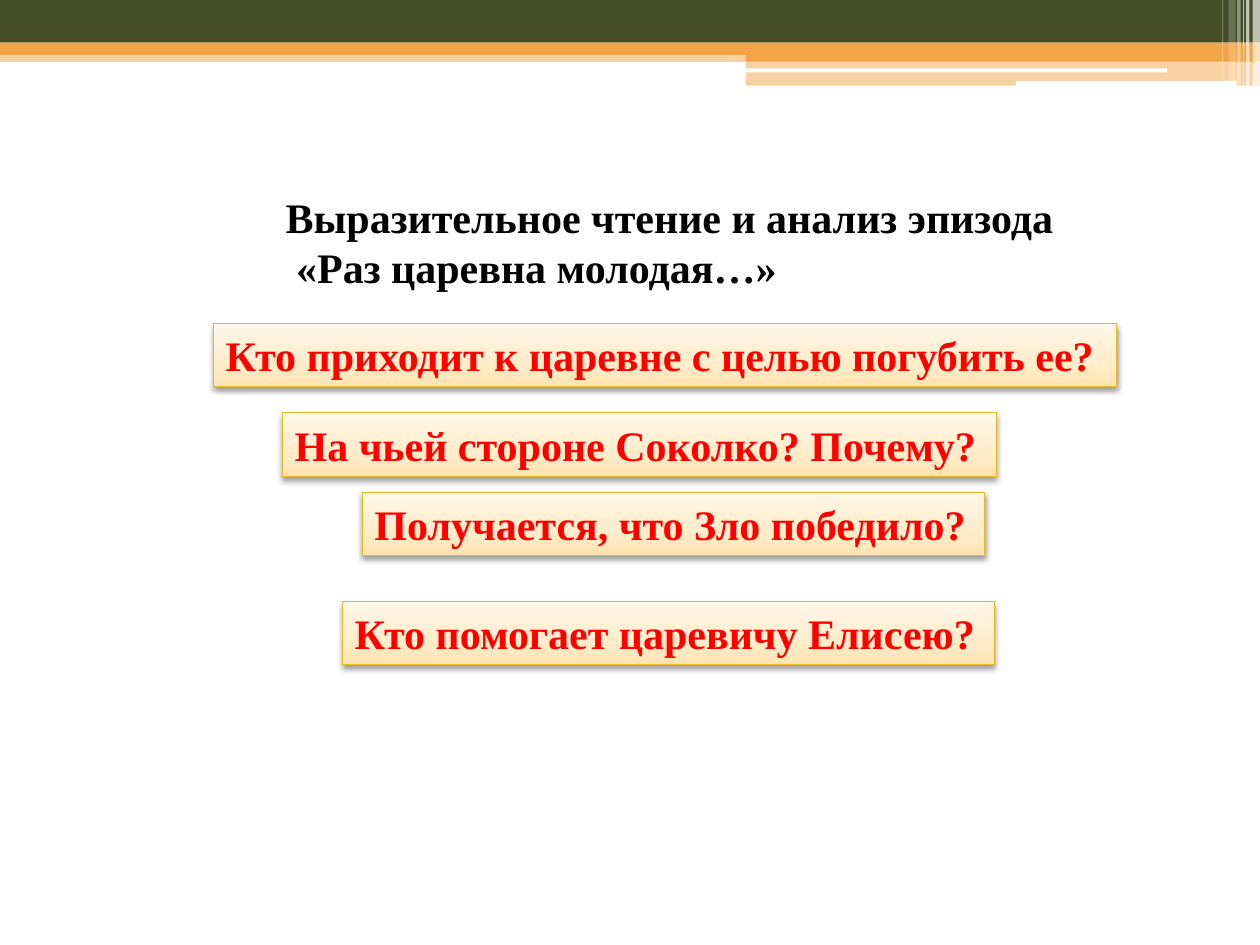
import copy
import lxml.etree
import pptx
import pptx.dml.color
import pptx.enum.shapes
import pptx.enum.text
import pptx.oxml.ns
import pptx.util

Cm = pptx.util.Cm
Pt = pptx.util.Pt
RGBColor = pptx.dml.color.RGBColor
SHAPES = pptx.enum.shapes.MSO_SHAPE
ANCHOR = pptx.enum.text.MSO_ANCHOR
qn = pptx.oxml.ns.qn

WHITE = RGBColor(0xFF, 0xFF, 0xFF)
BLACK = RGBColor(0x00, 0x00, 0x00)
RED = RGBColor(0xFF, 0x00, 0x00)
OLIVE = RGBColor(0x44, 0x4D, 0x26)
ORANGE = RGBColor(0xF3, 0xA4, 0x47)
GOLD = RGBColor(0xE7, 0xBA, 0x23)
CREAM_STOPS = [
    (0, RGBColor(0xFF, 0xE4, 0xB2)),
    (0.35, RGBColor(0xFF, 0xEC, 0xC9)),
    (1, RGBColor(0xFF, 0xF7, 0xEA)),
]

deck = pptx.Presentation()
deck.slide_width, deck.slide_height = Cm(25.4), Cm(19.05)
page = deck.slides.add_slide(deck.slide_layouts[6])


def add_bar(left, top, width, height, color, opacity=100, kind=SHAPES.RECTANGLE):
    bar = page.shapes.add_shape(kind, Cm(left), Cm(top), Cm(width), Cm(height))
    bar.shadow.inherit = False
    bar.fill.solid()
    bar.fill.fore_color.rgb = color
    bar.line.fill.background()
    if opacity < 100:
        color_node = bar.element.spPr.find(qn("a:solidFill"))[0]
        lxml.etree.SubElement(color_node, qn("a:alpha"), val=str(opacity * 1000))


def write_lines(frame, lines, color):
    frame.word_wrap = True
    for index, line in enumerate(lines):
        para = frame.add_paragraph() if index else frame.paragraphs[0]
        para.text = line
        para.alignment = pptx.enum.text.PP_ALIGN.LEFT
        para.font.name = "Times New Roman"
        para.font.size = Pt(24)
        para.font.bold = True
        para.font.color.rgb = color


# Header bands
add_bar(0, 1.02, 25.4, 0.23, ORANGE, 50)
add_bar(0, 0, 25.4, 0.86, OLIVE)
add_bar(0, 0.86, 25.4, 0.25, ORANGE)
add_bar(15.03, 1, 10.37, 0.24, ORANGE)
add_bar(15.03, 1.23, 10.37, 0.5, ORANGE, 50)
add_bar(15.02, 1.38, 8.51, 0.08, WHITE, kind=SHAPES.ROUNDED_RECTANGLE)
add_bar(20.48, 1.63, 4.45, 0.1, WHITE, kind=SHAPES.ROUNDED_RECTANGLE)

# Pale stripes in the right corner: left, width, height, opacity
for left, width, height, opacity in [
    (25.25, 0.15, 1.73, 65),
    (25.12, 0.07, 1.73, 65),
    (25.06, 0.02, 1.73, 60),
    (24.94, 0.07, 1.73, 40),
    (24.77, 0.14, 1.63, 20),
    (24.64, 0.02, 1.63, 30),
]:
    add_bar(left, 0, width, height, WHITE, opacity)

# Heading
heading = page.shapes.add_textbox(Cm(5.51), Cm(3.73), Cm(16.2), Cm(2.31))
write_lines(
    heading.text_frame,
    ["Выразительное чтение и анализ эпизода", " «Раз царевна молодая…»"],
    BLACK,
)

# Question boxes: left, top, width, text
for left, top, width, question in [
    (4.3, 6.52, 18.21, "Кто приходит к царевне с целью погубить ее?"),
    (5.69, 8.32, 14.39, "На чьей стороне Соколко? Почему?"),
    (7.3, 9.92, 12.55, "Получается, что Зло победило?"),
    (6.9, 12.12, 13.14, "Кто помогает царевичу Елисею?"),
]:
    box = page.shapes.add_shape(
        SHAPES.RECTANGLE, Cm(left), Cm(top), Cm(width), Cm(1.28)
    )
    box.line.color.rgb = GOLD
    box.line.width = Pt(0.5)

    # Cream gradient, darkest at the bottom
    box.fill.gradient()
    box.fill.gradient_angle = 90
    stop_list = box.element.spPr.find(qn("a:gradFill")).find(qn("a:gsLst"))
    stop_list.insert(1, copy.deepcopy(stop_list[0]))
    for stop, (position, color) in zip(box.fill.gradient_stops, CREAM_STOPS):
        stop.position = position
        stop.color.rgb = color

    # Soft shadow straight below
    box.shadow.inherit = False
    effects = box.element.spPr.find(qn("a:effectLst"))
    shadow = lxml.etree.SubElement(
        effects, qn("a:outerShdw"), blurRad=str(Pt(3.5)), dist=str(Pt(2)),
        dir="5400000", rotWithShape="0",
    )
    shade = lxml.etree.SubElement(shadow, qn("a:srgbClr"), val=str(BLACK))
    lxml.etree.SubElement(shade, qn("a:alpha"), val="38000")

    box.text_frame.vertical_anchor = ANCHOR.MIDDLE
    write_lines(box.text_frame, [question], RED)

deck.save("out.pptx")
